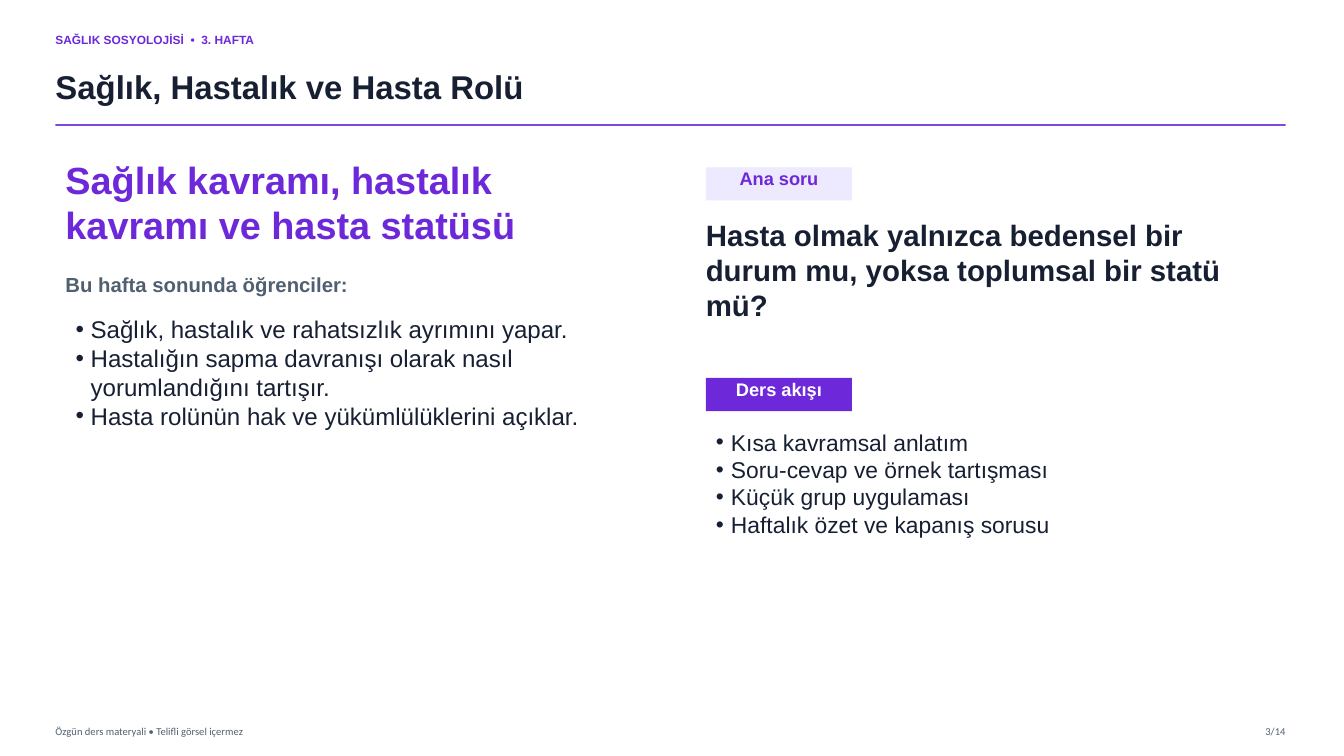
"""Build the weekly opening slide of a health sociology course."""
from dataclasses import dataclass

from lxml.etree import SubElement
from pptx import Presentation
from pptx.dml.color import RGBColor
from pptx.enum.shapes import MSO_CONNECTOR, MSO_SHAPE
from pptx.enum.text import MSO_ANCHOR as Anchor, MSO_AUTO_SIZE, PP_ALIGN as Align
from pptx.oxml.ns import qn
from pptx.slide import Slide
from pptx.util import Pt

PX = 9144
COLORS = {
    "purple": "6D28D9",
    "lilac": "EDE9FE",
    "ink": "172033",
    "slate": "506070",
    "white": "FFFFFF",
}
HANG = 15


@dataclass(frozen=True)
class Box:
    left: int
    top: int
    width: int
    height: int

    def emu(self) -> tuple[int, ...]:
        return tuple(v * PX for v in (self.left, self.top, self.width, self.height))


@dataclass(frozen=True)
class Style:
    size: float
    color: str
    bold: bool = False
    font: str = "Arial"
    align: Align = Align.LEFT
    anchor: Anchor = Anchor.TOP
    bullet: bool = False


@dataclass(frozen=True)
class Label:
    box: Box
    text: str
    style: Style


@dataclass(frozen=True)
class Tag:
    box: Box
    text: str
    fill: str
    color: str


@dataclass(frozen=True)
class Listing:
    index: int
    box: Box
    size: float
    items: tuple[str, ...]


TITLE = Label(Box(55, 58, 1195, 55), "Sağlık, Hastalık ve Hasta Rolü",
              Style(23.5, "ink", True, anchor=Anchor.MIDDLE))
LABELS = (
    Label(Box(55, 25, 360, 28), "SAĞLIK SOSYOLOJİSİ  •  3. HAFTA",
          Style(8.5, "purple", True, anchor=Anchor.MIDDLE)),
    Label(Box(65, 155, 530, 95), "Sağlık kavramı, hastalık kavramı ve hasta statüsü",
          Style(27, "purple", True)),
    Label(Box(65, 270, 490, 30), "Bu hafta sonunda öğrenciler:",
          Style(14.5, "slate", True)),
    Label(Box(700, 215, 535, 110),
          "Hasta olmak yalnızca bedensel bir durum mu, yoksa toplumsal bir statü mü?",
          Style(21, "ink", True)),
    Label(Box(55, 714, 600, 22), "Özgün ders materyali • Telifli görsel içermez",
          Style(7.5, "slate", font="Calibri", anchor=Anchor.MIDDLE)),
    Label(Box(1210, 714, 65, 22), "3/14",
          Style(7.5, "slate", font="Calibri", align=Align.RIGHT, anchor=Anchor.MIDDLE)),
)
TAGS = (
    Tag(Box(700, 166, 145, 33), "Ana soru", "lilac", "purple"),
    Tag(Box(700, 375, 145, 33), "Ders akışı", "purple", "white"),
)
LISTINGS = (
    Listing(1, Box(75, 312, 550, 200), 17.2, (
        "Sağlık, hastalık ve rahatsızlık ayrımını yapar.",
        "Hastalığın sapma davranışı olarak nasıl yorumlandığını tartışır.",
        "Hasta rolünün hak ve yükümlülüklerini açıklar.",
    )),
    Listing(2, Box(710, 425, 535, 155), 16.3, (
        "Kısa kavramsal anlatım",
        "Soru-cevap ve örnek tartışması",
        "Küçük grup uygulaması",
        "Haftalık özet ve kapanış sorusu",
    )),
)


def rgb(name: str) -> RGBColor:
    return RGBColor.from_string(COLORS[name])


def place(shape, box: Box) -> None:
    shape.left, shape.top, shape.width, shape.height = box.emu()


def write(shape, lines: tuple[str, ...], style: Style) -> None:
    frame = shape.text_frame
    frame.text = "\n".join(lines)
    frame.word_wrap = True
    frame.auto_size = MSO_AUTO_SIZE.NONE
    frame.vertical_anchor = style.anchor
    frame.margin_left = frame.margin_top = frame.margin_right = frame.margin_bottom = 0
    for paragraph in frame.paragraphs:
        paragraph.alignment = style.align
        paragraph.space_before = Pt(0)
        if style.bullet:
            properties = paragraph._p.get_or_add_pPr()
            properties.set("marL", str(HANG * PX))
            properties.set("indent", str(-HANG * PX))
            SubElement(properties, qn("a:buChar")).set("char", "•")
        font = paragraph.font
        font.name, font.size, font.bold = style.font, Pt(style.size), style.bold
        font.color.rgb = rgb(style.color)


def add_label(slide: Slide, label: Label) -> None:
    write(slide.shapes.add_textbox(*label.box.emu()), (label.text,), label.style)


def add_tag(slide: Slide, tag: Tag) -> None:
    shape = slide.shapes.add_shape(MSO_SHAPE.RECTANGLE, *tag.box.emu())
    shape.shadow.inherit = False
    shape.fill.solid()
    shape.fill.fore_color.rgb = rgb(tag.fill)
    shape.line.fill.background()
    write(shape, (tag.text,), Style(13, tag.color, True, align=Align.CENTER))


def fill_listing(slide: Slide, listing: Listing) -> None:
    shape = slide.placeholders[listing.index]
    place(shape, listing.box)
    write(shape, listing.items, Style(listing.size, "ink", bullet=True))


def add_rule(slide: Slide, left: int, right: int, top: int) -> None:
    rule = slide.shapes.add_connector(
        MSO_CONNECTOR.STRAIGHT, left * PX, top * PX, right * PX, top * PX)
    rule.line.width = Pt(1.2)
    rule.line.color.rgb = rgb("purple")
    properties = rule._element.spPr
    color = next(properties.iter(qn("a:srgbClr")))
    SubElement(color, qn("a:alpha")).set("val", "85000")
    SubElement(properties, qn("a:effectLst"))


def main() -> None:
    presentation = Presentation()
    presentation.slide_width, presentation.slide_height = 1333 * PX, 750 * PX
    slide = presentation.slides.add_slide(presentation.slide_layouts[3])
    slide.background.fill.solid()
    slide.background.fill.fore_color.rgb = rgb("white")
    place(slide.shapes.title, TITLE.box)
    write(slide.shapes.title, (TITLE.text,), TITLE.style)
    add_rule(slide, 55, 1275, 124)
    for label in LABELS:
        add_label(slide, label)
    for tag in TAGS:
        add_tag(slide, tag)
    for listing in LISTINGS:
        fill_listing(slide, listing)
    presentation.save("out.pptx")


if __name__ == "__main__":
    main()
